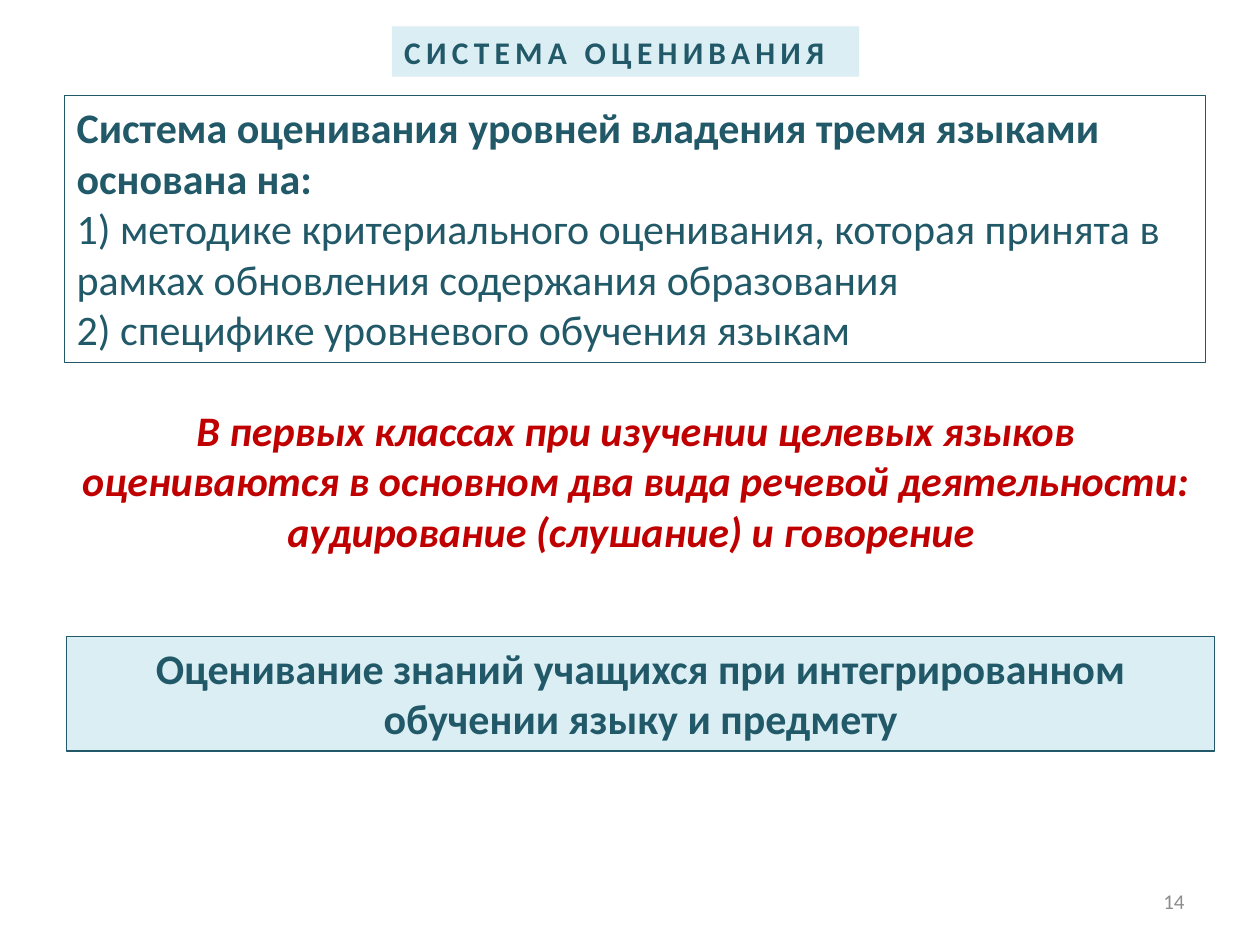
from collections import namedtuple

from pptx import Presentation
from pptx.dml.color import RGBColor
from pptx.enum.shapes import MSO_SHAPE as Shape
from pptx.enum.text import MSO_ANCHOR as Anchor, PP_ALIGN as Align
from pptx.util import Inches, Pt

TEAL = RGBColor(0x21, 0x59, 0x68)
PALE = RGBColor(0xDB, 0xEE, 0xF4)
RED = RGBColor(0xC0, 0x00, 0x00)
GREY = RGBColor(0x8C, 0x8C, 0x8C)

Box = namedtuple("Box", "left top width height")


def place(box):
    return [Inches(length) for length in box]


def add_panel(page, box, fill=None, line=None):
    panel = page.shapes.add_shape(Shape.RECTANGLE, *place(box))
    panel.shadow.inherit = False
    if fill is None:
        panel.fill.background()
    else:
        panel.fill.solid()
        panel.fill.fore_color.rgb = fill
    if line is None:
        panel.line.fill.background()
    else:
        panel.line.color.rgb = line
        panel.line.width = Pt(0.75)
    return panel


def write(shape, rows, size=24, color=TEAL, align=Align.LEFT,
          anchor=Anchor.TOP, italic=False, spacing=0):
    frame = shape.text_frame
    frame.word_wrap = True
    frame.vertical_anchor = anchor
    for index, (text, bold) in enumerate(rows):
        para = frame.add_paragraph() if index else frame.paragraphs[0]
        para.alignment = align
        span = para.add_run()
        span.text = text
        span.font.name = "Calibri"
        span.font.size = Pt(size)
        span.font.bold = bold
        span.font.italic = italic
        span.font.color.rgb = color
        if spacing:
            span.font._element.set("spc", str(spacing * 100))


def add_title(page, box):
    panel = add_panel(page, box, fill=PALE)
    write(panel, [("СИСТЕМА ОЦЕНИВАНИЯ", True)], size=18, spacing=3)


def add_principles(page, box):
    panel = add_panel(page, box, line=TEAL)
    write(panel, [
        ("Система оценивания уровней владения тремя языками основана на:", True),
        ("1) методике критериального оценивания, которая принята в рамках "
         "обновления содержания образования", False),
        ("2) специфике уровневого обучения языкам", False),
    ])


def add_first_grade_note(page, box):
    note = page.shapes.add_textbox(*place(box))
    write(note, [
        ("В первых классах при изучении целевых языков оцениваются в основном "
         "два вида речевой деятельности: аудирование (слушание) и говорение ", True),
    ], color=RED, align=Align.CENTER, italic=True)


def add_integrated_banner(page, box):
    panel = add_panel(page, box, fill=PALE, line=TEAL)
    write(panel, [
        ("Оценивание знаний учащихся при интегрированном обучении языку и предмету",
         True),
    ], align=Align.CENTER)


def add_page_number(page, box):
    number = page.shapes.add_textbox(*place(box))
    write(number, [("14", False)], size=12, color=GREY, align=Align.RIGHT,
          anchor=Anchor.MIDDLE)


def main():
    deck = Presentation()
    deck.slide_width, deck.slide_height = Inches(10), Inches(7.5)
    page = deck.slides.add_slide(deck.slide_layouts[6])
    add_principles(page, Box(0.51, 0.76, 9.06, 2.12))
    add_first_grade_note(page, Box(0.52, 3.16, 9.05, 1.31))
    add_integrated_banner(page, Box(0.53, 5.05, 9.11, 0.91))
    add_page_number(page, Box(7.17, 6.95, 2.33, 0.4))
    add_title(page, Box(3.11, 0.21, 3.71, 0.4))
    deck.save("out.pptx")


if __name__ == "__main__":
    main()
